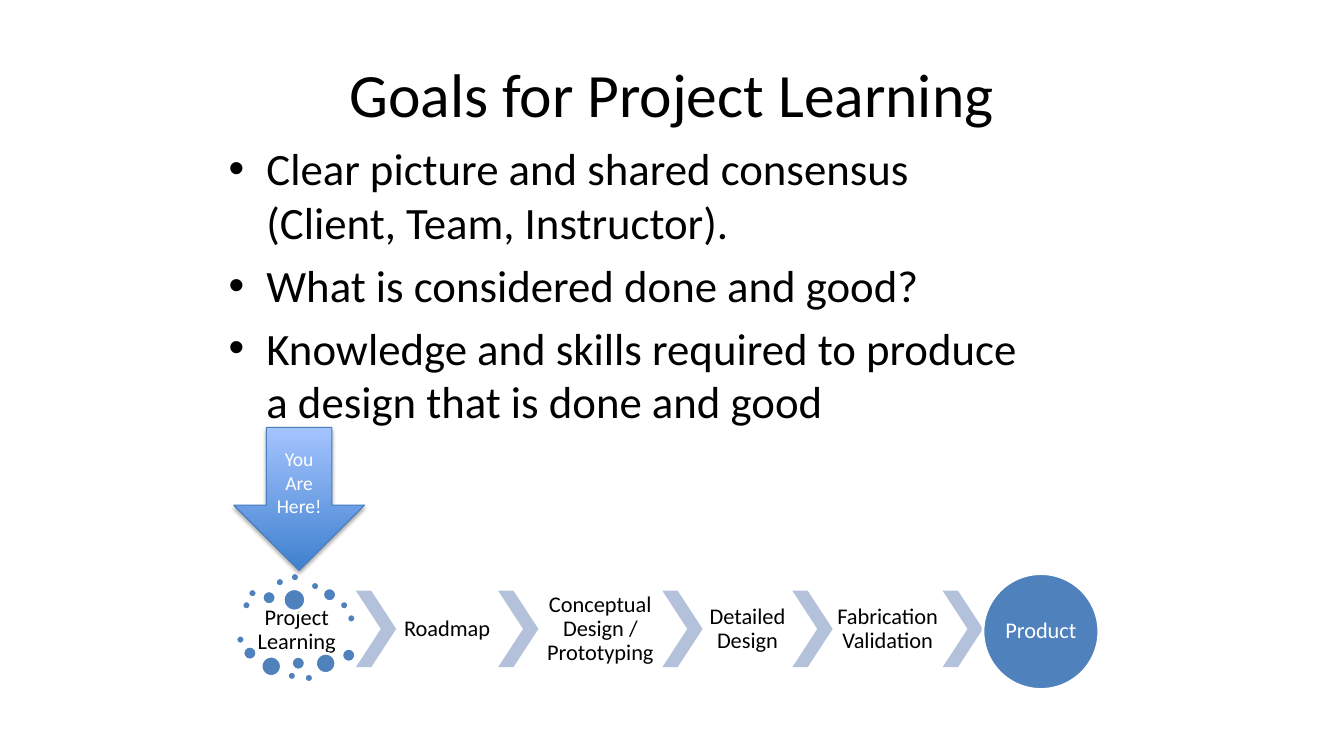
from lxml import etree
from pptx import Presentation
from pptx import util as u
from pptx.dml.color import RGBColor
from pptx.enum import shapes, text
from pptx.oxml import ns

BLACK, WHITE, BLUE, PALE_BLUE = "000000", "FFFFFF", "4F81BD", "B3C1DB"
Preset = shapes.MSO_SHAPE


def color(value):
    return RGBColor.from_string(value)


class SlideBuilder:
    font = "Calibri"

    def __init__(self, slide):
        self.slide = slide

    def set_text(self, shape, lines, size, ink=BLACK, inset=0, line_spacing=None,
                 align=text.PP_ALIGN.CENTER, anchor=text.MSO_ANCHOR.MIDDLE,
                 indent=0, gap=0):
        """One paragraph per line, bulleted when indented; a vertical tab breaks a line."""
        frame = shape.text_frame
        frame.word_wrap = True
        frame.vertical_anchor = anchor
        frame.margin_left = frame.margin_right = u.Pt(inset)
        frame.margin_top = frame.margin_bottom = u.Pt(inset / 2)
        for index, line in enumerate(lines):
            paragraph = frame.add_paragraph() if index else frame.paragraphs[0]
            paragraph.text = line
            if indent:
                self.add_bullet(paragraph, indent)
            if index:
                paragraph.space_before = u.Pt(gap)
            paragraph.alignment = align
            paragraph.line_spacing = line_spacing
            paragraph.font.name = self.font
            paragraph.font.size = u.Pt(size)
            paragraph.font.color.rgb = color(ink)

    def add_bullet(self, paragraph, indent):
        properties = paragraph._p.get_or_add_pPr()
        properties.set("marL", str(u.Pt(indent)))
        properties.set("indent", str(-u.Pt(indent)))
        etree.SubElement(properties, ns.qn("a:buFont"), typeface="Arial")
        etree.SubElement(properties, ns.qn("a:buChar"), char="•")

    def label(self, left, top, width, height, lines, size, **style):
        box = self.slide.shapes.add_textbox(*map(u.Pt, (left, top, width, height)))
        self.set_text(box, lines, size, **style)

    def shape(self, preset, left, top, width, height, fill=BLUE, line=None, weight=2):
        shape = self.slide.shapes.add_shape(
            preset, *map(u.Pt, (left, top, width, height)))
        shape.shadow.inherit = False
        shape.fill.solid()
        shape.fill.fore_color.rgb = color(fill)
        if line:
            shape.line.color.rgb = color(line)
            shape.line.width = u.Pt(weight)
        else:
            shape.line.fill.background()
        return shape

    def gradient(self, shape, bottom, top):
        shape.fill.gradient()
        shape.fill.gradient_angle = 90
        for stop, value in zip(shape.fill.gradient_stops, (bottom, top)):
            stop.color.rgb = color(value)

    def shadow(self, shape, blur, distance, opacity):
        effects = shape._element.spPr.find(ns.qn("a:effectLst"))
        outer = etree.SubElement(
            effects, ns.qn("a:outerShdw"), blurRad=str(u.Pt(blur)),
            dist=str(u.Pt(distance)), dir="5400000", rotWithShape="0")
        black = etree.SubElement(outer, ns.qn("a:srgbClr"), val=BLACK)
        etree.SubElement(black, ns.qn("a:alpha"), val=str(opacity * 1000))


# Dot positions around "Project Learning", keyed by diameter
DOTS = {
    6.5: [(172.8, 429.1), (177.1, 420.5), (196.6, 412.6), (207.4, 409),
          (221.8, 415.4), (242.6, 429.1), (247.7, 438.5), (168.5, 453.6),
          (205.2, 479.5), (217.4, 481)],
    10: [(187.2, 421.9), (230.4, 419.8), (173.5, 461.5), (208.1, 468.7),
         (244.1, 463)],
    14.5: [(186.5, 468.7), (225.4, 466.6)],
    16: [(202.3, 420.5)],
}
# Process steps with their widths
STEPS = [("Roadmap", 72.8), ("Conceptual\vDesign / Prototyping", 88.5),
         ("Detailed\vDesign", 64.1), ("Fabrication\vValidation", 78.5)]
STEP_TOP, STEP_HEIGHT, CHEVRON_WIDTH = 421.9, 54.7, 28.8


def main():
    presentation = Presentation()
    presentation.slide_width, presentation.slide_height = u.Pt(960), u.Pt(540)
    slide = presentation.slides.add_slide(presentation.slide_layouts[6])
    builder = SlideBuilder(slide)

    # Title and goals
    builder.label(48, 21.6, 864, 90, ["Goals for Project Learning"], 44, inset=7.2)
    builder.label(156.2, 97.2, 582.5, 385.2, [
        "Clear picture and shared consensus (Client, Team, Instructor).",
        "What is considered done and good?",
        "Knowledge and skills required to produce a design that is done and good",
    ], 32, inset=7.2, indent=27, gap=6.4, align=text.PP_ALIGN.LEFT,
        anchor=text.MSO_ANCHOR.TOP)

    # Starting point
    step_style = dict(size=16, inset=1.5, line_spacing=0.9)
    builder.label(169.9, 429.8, 84.2, 41, ["Project Learning"], **step_style)
    for diameter, corners in DOTS.items():
        for left, top in corners:
            builder.shape(Preset.OVAL, left, top, diameter, diameter, line=WHITE)

    # A chevron before each step and before the product
    left = 254.2
    for name, width in STEPS + [(None, 0)]:
        chevron = builder.shape(Preset.CHEVRON, left, STEP_TOP, CHEVRON_WIDTH,
                                STEP_HEIGHT, PALE_BLUE)
        chevron.adjustments[0] = 0.62
        left += CHEVRON_WIDTH
        if name:
            builder.label(left, STEP_TOP, width, STEP_HEIGHT, [name], **step_style)
        left += width

    # Product
    product = builder.shape(Preset.OVAL, left, 409.7, 82.8, 82.8, line=WHITE)
    builder.set_text(product, ["Product"], 16, WHITE, line_spacing=0.9)

    # Position marker
    marker = builder.shape(Preset.DOWN_ARROW, 167, 305.3, 93.5, 102.2,
                           line="4B7EBC", weight=0.75)
    builder.gradient(marker, bottom="3F80CE", top="A4C4FF")
    builder.shadow(marker, blur=3.1, distance=1.8, opacity=35)
    builder.set_text(marker, ["You Are Here!"], 14, WHITE, inset=6)

    presentation.save("out.pptx")


if __name__ == "__main__":
    main()
